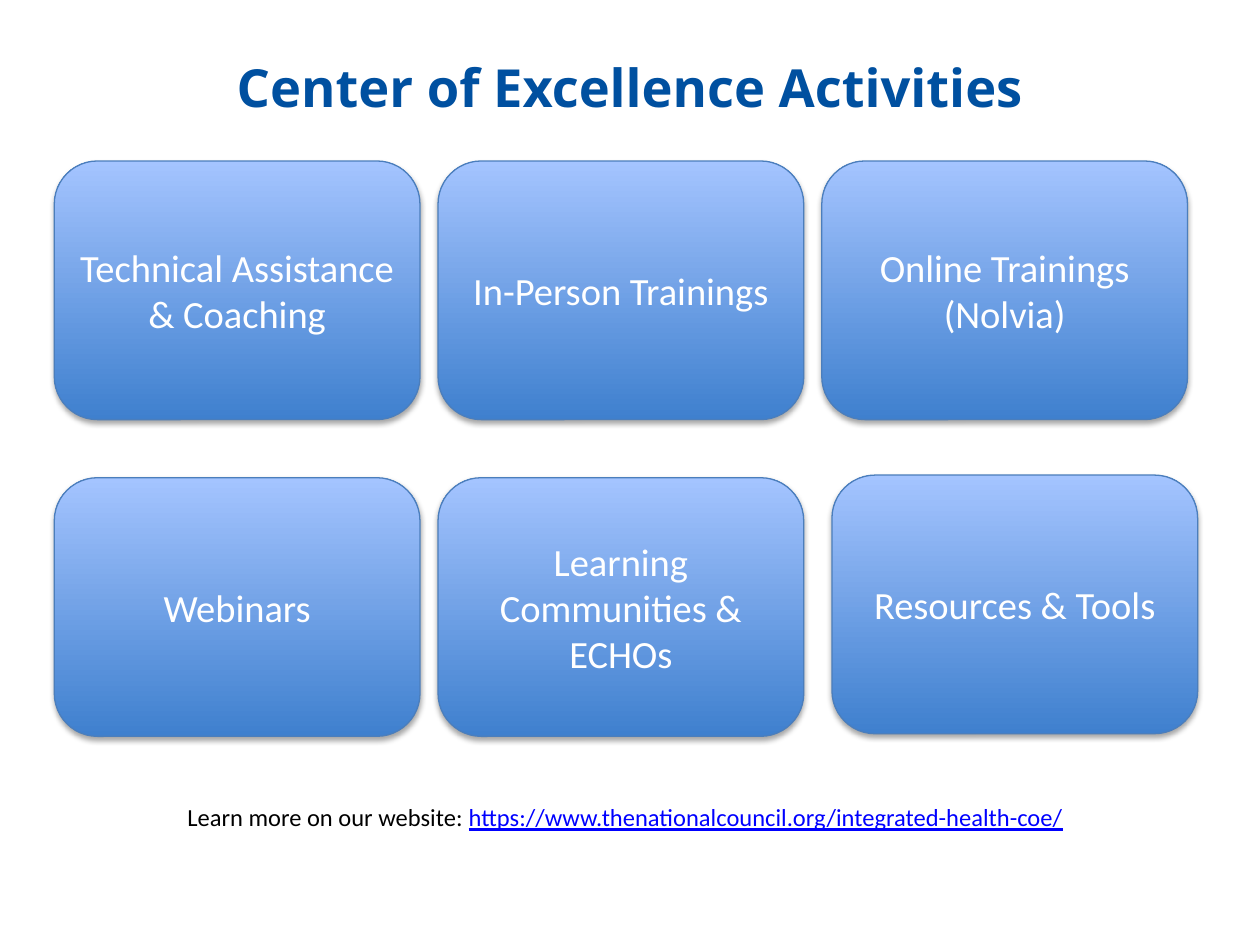
"""Build the Center of Excellence Activities slide."""
from lxml.etree import SubElement
from pptx import Presentation
from pptx.dml.color import RGBColor
from pptx.enum.shapes import MSO_SHAPE
from pptx.enum.text import MSO_ANCHOR, MSO_AUTO_SIZE, PP_ALIGN
from pptx.oxml.ns import qn
from pptx.util import Pt

TITLE = "Center of Excellence Activities"
ACTIVITIES = [
    ["Technical Assistance & Coaching", "In-Person Trainings", "Online Trainings (Nolvia)"],
    ["Webinars", "Learning Communities & ECHOs", "Resources & Tools"],
]
NUDGES = {"Resources & Tools": (5.8, -1.5)}
FOOTER = "Learn more on our website: "
ADDRESS = "https://www.thenationalcouncil.org/integrated-health-coe/"

NAVY = RGBColor(0x00, 0x50, 0xA0)
BLACK = RGBColor(0x00, 0x00, 0x00)
WHITE = RGBColor(0xFF, 0xFF, 0xFF)
LINK_BLUE = RGBColor(0x00, 0x00, 0xFF)
CARD_BOTTOM = RGBColor(0x3F, 0x80, 0xCE)
CARD_TOP = RGBColor(0xA4, 0xC4, 0xFF)
CARD_LINE = RGBColor(0x4B, 0x7E, 0xBC)

CARD_WIDTH, CARD_HEIGHT = 209, 147.8
GRID_LEFT, GRID_TOP = 31, 92
COLUMN_STEP, ROW_STEP = 219.3, 181


def add_text(paragraph, text, size=22, font="Calibri", color=WHITE,
             bold=False, underline=False, align=PP_ALIGN.CENTER):
    paragraph.alignment = align
    run = paragraph.add_run()
    run.text = text
    run.font.size = Pt(size)
    run.font.name = font
    run.font.color.rgb = color
    run.font.bold = bold
    run.font.underline = underline


def add_box(slide, left, top, width, height, wrap=True):
    shape = slide.shapes.add_textbox(Pt(left), Pt(top), Pt(width), Pt(height))
    shape.text_frame.word_wrap = wrap
    return shape.text_frame


def add_shadow(shape):
    shape.shadow.inherit = False
    effects = shape._element.spPr.find(qn("a:effectLst"))
    shadow = SubElement(effects, qn("a:outerShdw"), blurRad=str(Pt(3.1)),
                        dist=str(Pt(1.8)), dir="5400000", rotWithShape="0")
    color = SubElement(shadow, qn("a:srgbClr"), val="000000")
    SubElement(color, qn("a:alpha"), val="35000")


def add_card(slide, text, left, top):
    shape = slide.shapes.add_shape(MSO_SHAPE.ROUNDED_RECTANGLE, Pt(left), Pt(top),
                                   Pt(CARD_WIDTH), Pt(CARD_HEIGHT))
    shape.fill.gradient()
    shape.fill.gradient_angle = 90
    for stop, color in zip(shape.fill.gradient_stops, (CARD_BOTTOM, CARD_TOP)):
        stop.color.rgb = color
    shape.line.color.rgb = CARD_LINE
    shape.line.width = Pt(0.75)
    add_shadow(shape)
    shape.text_frame.word_wrap = True
    shape.text_frame.vertical_anchor = MSO_ANCHOR.MIDDLE
    add_text(shape.text_frame.paragraphs[0], text)


def main():
    presentation = Presentation()
    presentation.slide_width, presentation.slide_height = Pt(720), Pt(540)
    slide = presentation.slides.add_slide(presentation.slide_layouts[6])

    title = add_box(slide, 36, 31.7, 648, 35.3)
    title.vertical_anchor = MSO_ANCHOR.MIDDLE
    add_text(title.paragraphs[0], TITLE, size=30, font="Open Sans", color=NAVY, bold=True)

    for row, names in enumerate(ACTIVITIES):
        for column, name in enumerate(names):
            across, down = NUDGES.get(name, (0, 0))
            add_card(slide, name, GRID_LEFT + column * COLUMN_STEP + across,
                     GRID_TOP + row * ROW_STEP + down)

    footer = add_box(slide, 100, 455, 520, 24.5, wrap=False)
    footer.auto_size = MSO_AUTO_SIZE.SHAPE_TO_FIT_TEXT
    line = footer.paragraphs[0]
    add_text(line, FOOTER, size=14, color=BLACK, align=PP_ALIGN.LEFT)
    add_text(line, ADDRESS, size=14, color=LINK_BLUE, underline=True, align=PP_ALIGN.LEFT)

    presentation.save("out.pptx")


if __name__ == "__main__":
    main()
